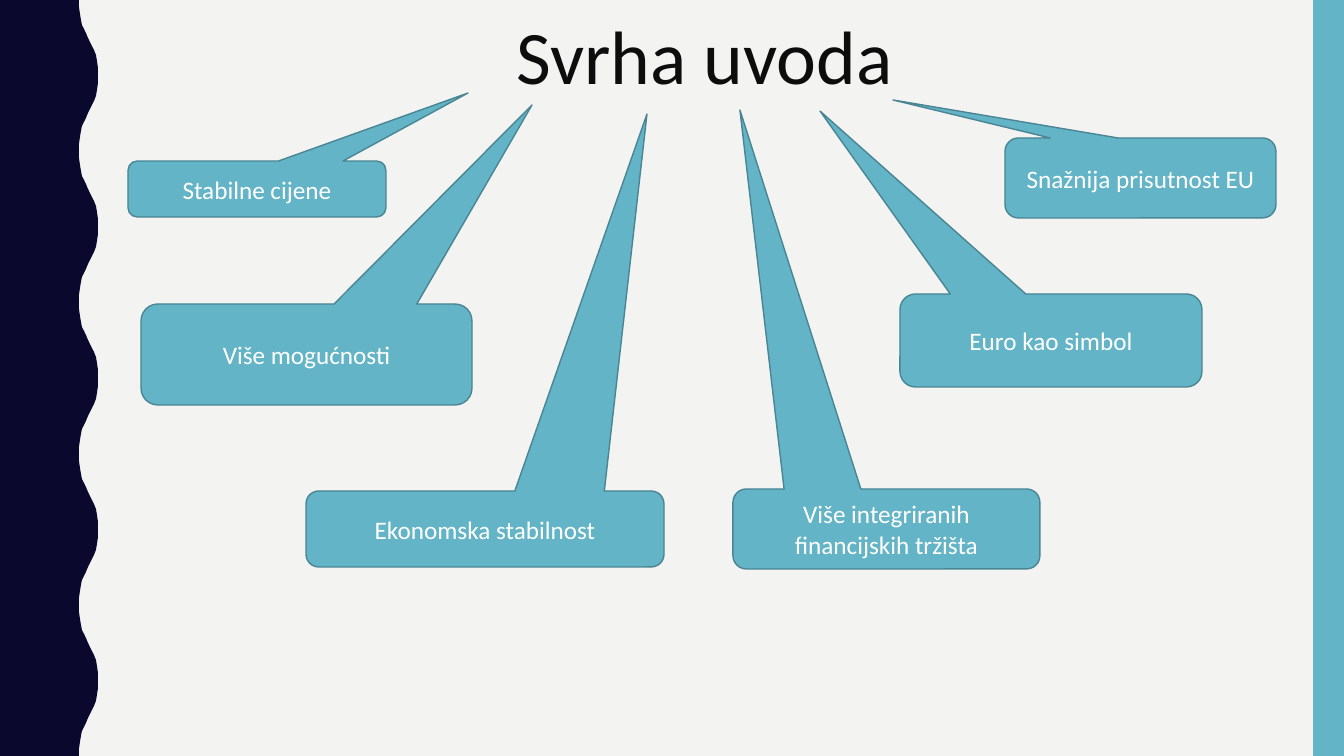
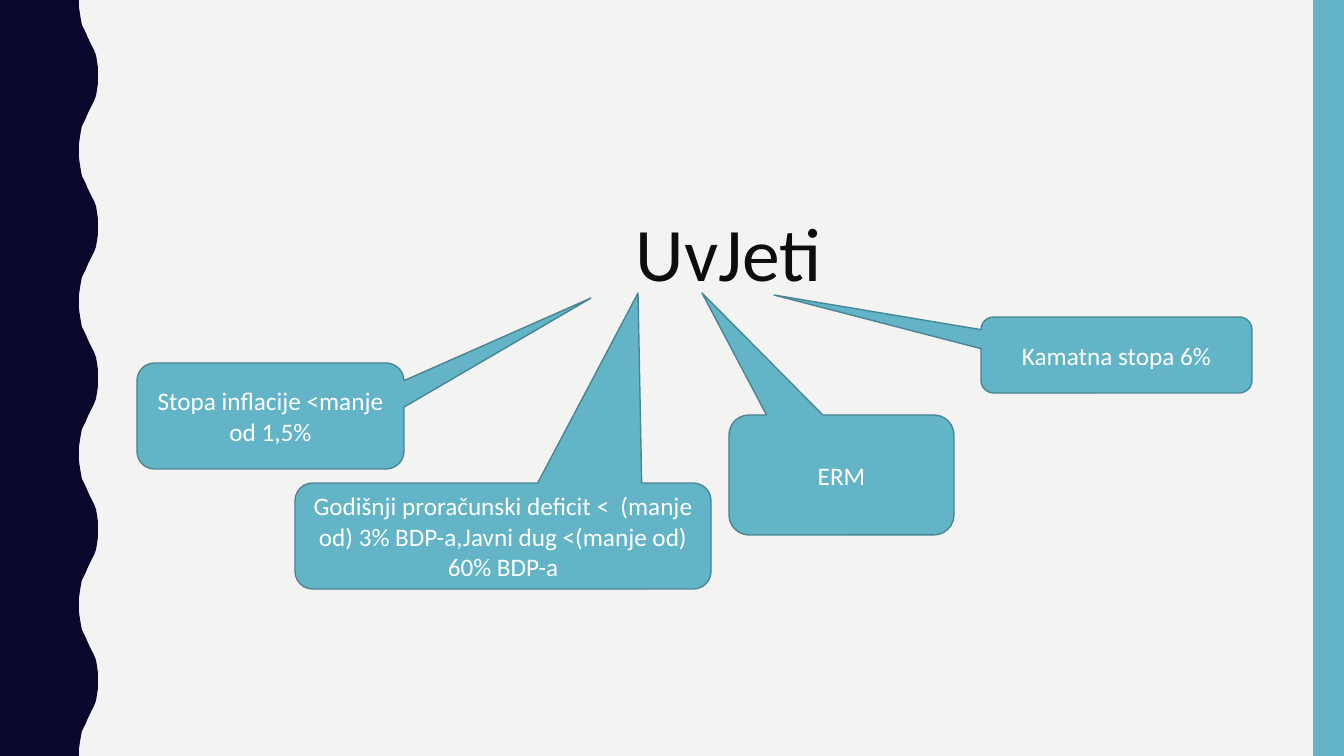
from pptx import Presentation
from pptx.dml.color import RGBColor
from pptx.enum.shapes import MSO_SHAPE
from pptx.enum.text import MSO_ANCHOR, MSO_AUTO_SIZE, PP_ALIGN
from pptx.util import Pt

WIDTH, HEIGHT = 1344, 756
PX = 12192000 / WIDTH
COLORS = {name: RGBColor.from_string(value) for name, value in {
    "paper": "F3F3F2",
    "navy": "0B082E",
    "teal": "62B4C6",
    "outline": "498592",
    "title": "0D0D0D",
    "label": "FFFFFF",
}.items()}

# Left edge band: one rising half wave, mirrored and repeated down the slide
WAVE_COUNT = 5
HALF_WAVE = [(79, 0), (79, 7), (80, 14), (81, 20), (82, 25), (84, 29), (86, 33), (88, 38),
             (90, 42), (92, 46), (94, 50), (96, 55), (97, 61), (98, 68), (98, 76)]
wave_length = HEIGHT / WAVE_COUNT
full_wave = HALF_WAVE + [(x, wave_length - y) for x, y in reversed(HALF_WAVE[:-1])]
wave_edge = [(x, y + i * wave_length) for i in range(WAVE_COUNT) for x, y in full_wave]

# Each slide: title, title box, then callouts as (text, box, tip of the tail)
SLIDES = [
    ("Svrha uvoda", (257, 4, 895, 102), [
        ("Stabilne cijene", (128, 161, 258, 56), (468, 93)),
        ("Više mogućnosti", (141, 304, 331, 101), (532, 105)),
        ("Ekonomska stabilnost", (306, 491, 358, 76), (647, 114)),
        ("Više integriranih financijskih tržišta", (733, 489, 307, 80), (740, 110)),
        ("Snažnija prisutnost EU", (1005, 138, 271, 80), (893, 100)),
        ("Euro kao simbol", (900, 294, 302, 93), (820, 111)),
    ]),
    ("UvJeti", (477, 201, 504, 102), [
        ("Stopa inflacije <manje od 1,5%", (137, 363, 267, 106), (591, 298)),
        ("Godišnji proračunski deficit <  (manje od) 3% BDP-a,Javni dug <(manje od) 60% BDP-a",
         (295, 483, 416, 106), (638, 293)),
        ("ERM", (729, 415, 225, 120), (702, 293)),
        ("Kamatna stopa 6%", (981, 317, 271, 76), (774, 295)),
    ]),
]


def emu(*lengths):
    return [round(length * PX) for length in lengths]


def write(shape, text, size, color):
    """Put one centred, wrapping paragraph into the shape."""
    shape.text_frame.word_wrap = True
    paragraph = shape.text_frame.paragraphs[0]
    paragraph.text = text
    paragraph.alignment = PP_ALIGN.CENTER
    paragraph.font.name = "Calibri"
    paragraph.font.size = Pt(size)
    paragraph.font.color.rgb = COLORS[color]


prs = Presentation()
prs.slide_width, prs.slide_height = emu(WIDTH, HEIGHT)
background = prs.slide_master.background.fill
background.solid()
background.fore_color.rgb = COLORS["paper"]

for title, title_box, callouts in SLIDES:
    slide = prs.slides.add_slide(prs.slide_layouts[6])

    outline = slide.shapes.build_freeform(0, 0, scale=PX)
    outline.add_line_segments(wave_edge + [(0, HEIGHT)], close=True)
    wave_band = outline.convert_to_shape()
    side_band = slide.shapes.add_shape(MSO_SHAPE.RECTANGLE, *emu(1313, 0, 31, HEIGHT))
    for band, color in [(wave_band, "navy"), (side_band, "teal")]:
        band.shadow.inherit = False
        band.fill.solid()
        band.fill.fore_color.rgb = COLORS[color]
        band.line.fill.background()

    heading = slide.shapes.add_textbox(*emu(*title_box))
    write(heading, title, 54, "title")
    heading.text_frame.auto_size = MSO_AUTO_SIZE.SHAPE_TO_FIT_TEXT

    for text, (left, top, width, height), (tip_x, tip_y) in callouts:
        callout = slide.shapes.add_shape(MSO_SHAPE.ROUNDED_RECTANGULAR_CALLOUT,
                                         *emu(left, top, width, height))
        callout.adjustments[0] = (tip_x - left) / width - 0.5
        callout.adjustments[1] = (tip_y - top) / height - 0.5
        callout.shadow.inherit = False
        callout.fill.solid()
        callout.fill.fore_color.rgb = COLORS["teal"]
        callout.line.color.rgb = COLORS["outline"]
        callout.line.width = Pt(1)
        write(callout, text, 18, "label")
        callout.text_frame.vertical_anchor = MSO_ANCHOR.MIDDLE

prs.save("out.pptx")
